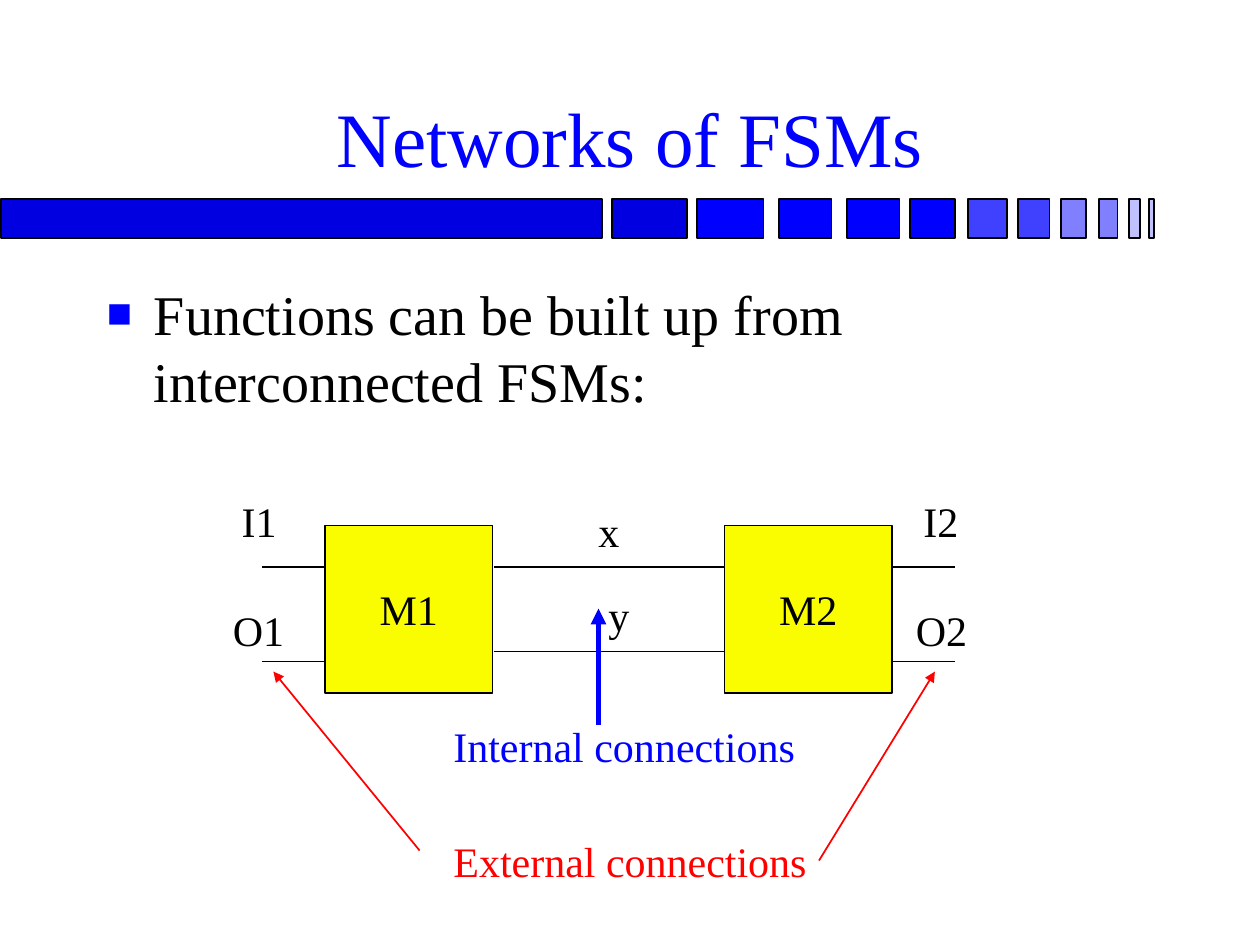
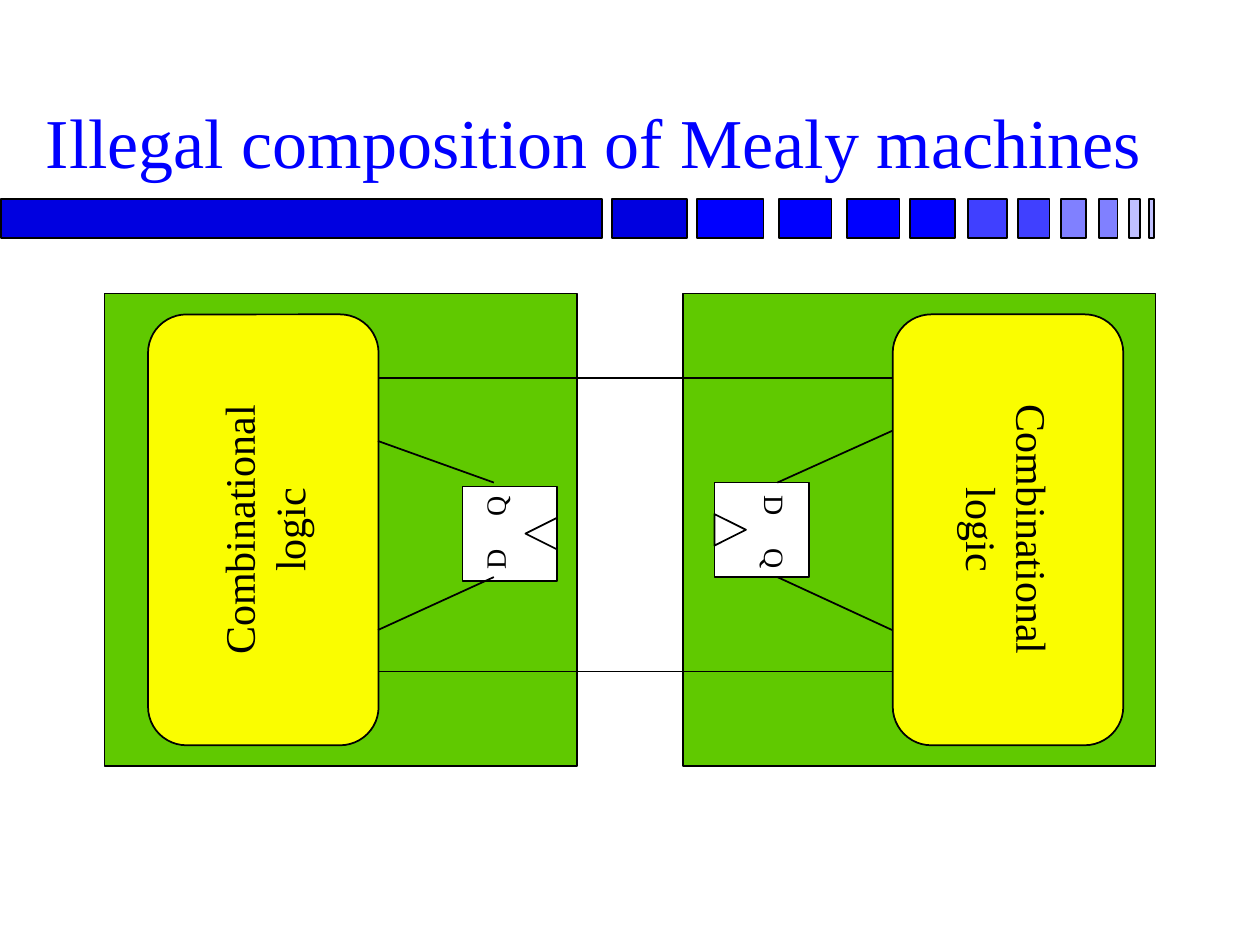
from lxml import etree
from pptx import Presentation
from pptx.dml.color import RGBColor
from pptx.enum.shapes import MSO_CONNECTOR, MSO_SHAPE
from pptx.enum.text import MSO_ANCHOR, MSO_AUTO_SIZE, PP_ALIGN
from pptx.oxml.ns import qn
from pptx.util import Cm, Pt

RECT, ROUND = MSO_SHAPE.RECTANGLE, MSO_SHAPE.ROUNDED_RECTANGLE
WEDGE = MSO_SHAPE.ISOSCELES_TRIANGLE
STRAIGHT = MSO_CONNECTOR.STRAIGHT
MIDDLE, BOTTOM = MSO_ANCHOR.MIDDLE, MSO_ANCHOR.BOTTOM
CENTER, LEFT = PP_ALIGN.CENTER, PP_ALIGN.LEFT
GROW, FIXED = MSO_AUTO_SIZE.SHAPE_TO_FIT_TEXT, MSO_AUTO_SIZE.NONE

FONT = "Times New Roman"
HUES = {"ink": "000000", "paper": "FFFFFF", "blue": "0000FF", "red": "FF0000",
        "yellow": "FAFD00", "green": "60C900", "navy": "0000E0",
        "mid": "4040FF", "soft": "8080FF", "pale": "C0C0FF"}

# Content; all places are in inches and turned into Cm by cm()
BAND_TOP, BAND_HIGH = 1.58, 0.31
BAND = [(0.01, 4.77, "navy"), (4.86, 0.59, "navy"), (5.53, 0.53, "blue"),
        (6.18, 0.42, "blue"), (6.72, 0.42, "blue"), (7.22, 0.36, "blue"),
        (7.68, 0.31, "mid"), (8.08, 0.25, "mid"), (8.42, 0.2, "soft"),
        (8.72, 0.15, "soft"), (8.96, 0.09, "pale"), (9.12, 0.04, "pale")]

BULLET = "Functions can be built up from interconnected FSMs:"
MACHINES = [("M1", 2.58), ("M2", 5.75)]
SIDE, TOP = 1.33, 4.17
WIRES = [(3.92, 5.75, 4.5), (3.92, 5.75, 5.17)] + [
    (x, x + 0.5, y) for x in (2.08, 7.08) for y in (4.5, 5.25)]
LABELS = [("x", 4.65, 3.96, 0.37, "ink"), ("y", 4.73, 4.63, 0.37, "ink"),
          ("I1", 1.82, 3.88, 0.48, "ink"), ("O1", 1.75, 4.75, 0.61, "ink"),
          ("I2", 7.23, 3.88, 0.48, "ink"), ("O2", 7.17, 4.75, 0.61, "ink"),
          ("External connections", 3.5, 6.58, 3.05, "red"),
          ("Internal connections", 3.5, 5.67, 2.95, "blue")]
ARROWS = [((3.33, 6.75), (2.17, 5.33), "red", 1),
          ((6.5, 6.83), (7.42, 5.33), "red", 1),
          ((4.75, 5.75), (4.75, 4.83), "blue", 3)]

LOGIC = ["Combinational", "logic"]
HALVES = [
    {"turn": 270, "panel": 0.83, "logic": 0.38, "flop": (3.67, 3.86),
     "clock": (4.17, 4.11), "pins": [("D", 3.75, 4.25), ("Q", 3.75, 3.83)]},
    {"turn": 90, "panel": 5.42, "logic": 6.29, "flop": (5.67, 3.83),
     "clock": (5.67, 4.08), "pins": [("D", 5.97, 3.83), ("Q", 5.97, 4.25)]},
]
LINKS = [((3, 3), (7.08, 3)), ((3, 5.33), (7.08, 5.33)),
         ((3, 5), (3.92, 4.58)), ((3.92, 3.83), (3, 3.5)),
         ((6.17, 4.58), (7.08, 5)), ((6.17, 3.83), (7.08, 3.42))]


# Shared helpers
def cm(*vals):
    return [Cm(val * 2.54) for val in vals]


def paint(name):
    return RGBColor.from_string(HUES[name])


def write(frame, lines, size, hue="ink", align=LEFT):
    for i, line in enumerate(lines):
        para = frame.add_paragraph() if i else frame.paragraphs[0]
        para.alignment = align
        run = para.add_run()
        run.text = line
        run.font.name, run.font.size = FONT, Pt(size)
        run.font.color.rgb = paint(hue)


def block(shapes, kind, box, hue, turn=0, lines=()):
    shape = shapes.add_shape(kind, *cm(*box))
    shape.shadow.inherit = False
    shape.fill.solid()
    shape.fill.fore_color.rgb = paint(hue)
    shape.line.color.rgb = paint("ink")
    shape.line.width = Pt(1)
    shape.rotation = turn
    if lines:
        frame = shape.text_frame
        frame.word_wrap = False
        frame.vertical_anchor = MIDDLE
        write(frame, lines, 24, align=CENTER)
    return shape


def label(slide, text, box, size=24, hue="ink", turn=0):
    area = slide.shapes.add_textbox(*cm(*box))
    area.rotation = turn
    area.text_frame.word_wrap = False
    area.text_frame.auto_size = GROW
    write(area.text_frame, [text], size, hue)


def line(slide, start, end, hue="ink", width=1, arrow=False):
    wire = slide.shapes.add_connector(STRAIGHT, *cm(*start, *end))
    wire.line.color.rgb = paint(hue)
    wire.line.width = Pt(width)
    props = wire.element.spPr
    if arrow:
        etree.SubElement(props.find(qn("a:ln")), qn("a:tailEnd"), type="triangle")
    etree.SubElement(props, qn("a:effectLst"))


def start(deck, text, left, wide, size):
    slide = deck.slides.add_slide(deck.slide_layouts[5])
    group = slide.shapes.add_group_shape()
    for x, w, hue in BAND:
        block(group.shapes, RECT, (x, BAND_TOP, w, BAND_HIGH), hue)
    title = slide.shapes.title
    title.left, title.top, title.width, title.height = cm(left, 0.21, wide, 1.29)
    frame = title.text_frame
    frame.auto_size, frame.vertical_anchor = FIXED, BOTTOM
    write(frame, [text], size, "blue", CENTER)
    return slide


def bullet(slide, text):
    frame = slide.shapes.add_textbox(*cm(0.75, 2.17, 8.5, 1.25)).text_frame
    frame.word_wrap = True
    write(frame, [text], 32)
    para = frame.paragraphs[0]
    para.space_before = Pt(6.4)
    props = para._p.get_or_add_pPr()
    indent = Cm(0.95)
    props.set("marL", str(indent))
    props.set("indent", str(-indent))
    tint = etree.SubElement(props, qn("a:buClr"))
    etree.SubElement(tint, qn("a:srgbClr"), val=HUES["blue"])
    etree.SubElement(props, qn("a:buSzPct"), val="75000")
    etree.SubElement(props, qn("a:buFont"), typeface=FONT)
    etree.SubElement(props, qn("a:buChar"), char="■")


# Slides
def network(deck):
    slide = start(deck, "Networks of FSMs", 0.75, 8.5, 44)
    bullet(slide, BULLET)
    for name, x in MACHINES:
        block(slide.shapes, RECT, (x, TOP, SIDE, SIDE), "yellow", lines=[name])
    for x, end, y in WIRES:
        line(slide, (x, y), (end, y))
    for text, x, y, w, hue in LABELS:
        label(slide, text, (x, y, w, 0.5), hue=hue)
    for tail, tip, hue, width in ARROWS:
        line(slide, tail, tip, hue, width, arrow=True)


def mealy(deck):
    slide = start(deck, "Illegal composition of Mealy machines", 0.17, 9.08, 40)
    for half in HALVES:
        turn, shapes = half["turn"], slide.shapes
        block(shapes, RECT, (half["panel"], 2.33, 3.75, 3.75), "green")
        logic = block(shapes, ROUND, (half["logic"], 3.29, 3.42, 1.83),
                      "yellow", turn, LOGIC)
        logic.adjustments[0] = 0.167
        block(shapes, RECT, (*half["flop"], 0.75, 0.75), "paper", turn)
        block(shapes, WEDGE, (*half["clock"], 0.25, 0.25), "paper", turn)
        for pin, x, y in half["pins"]:
            label(slide, pin, (x, y, 0.36, 0.37), 16, turn=turn)
    for tail, tip in LINKS:
        line(slide, tail, tip)


def main():
    deck = Presentation()
    deck.slide_width, deck.slide_height = cm(10, 7.5)
    network(deck)
    mealy(deck)
    deck.save("out.pptx")


if __name__ == "__main__":
    main()
